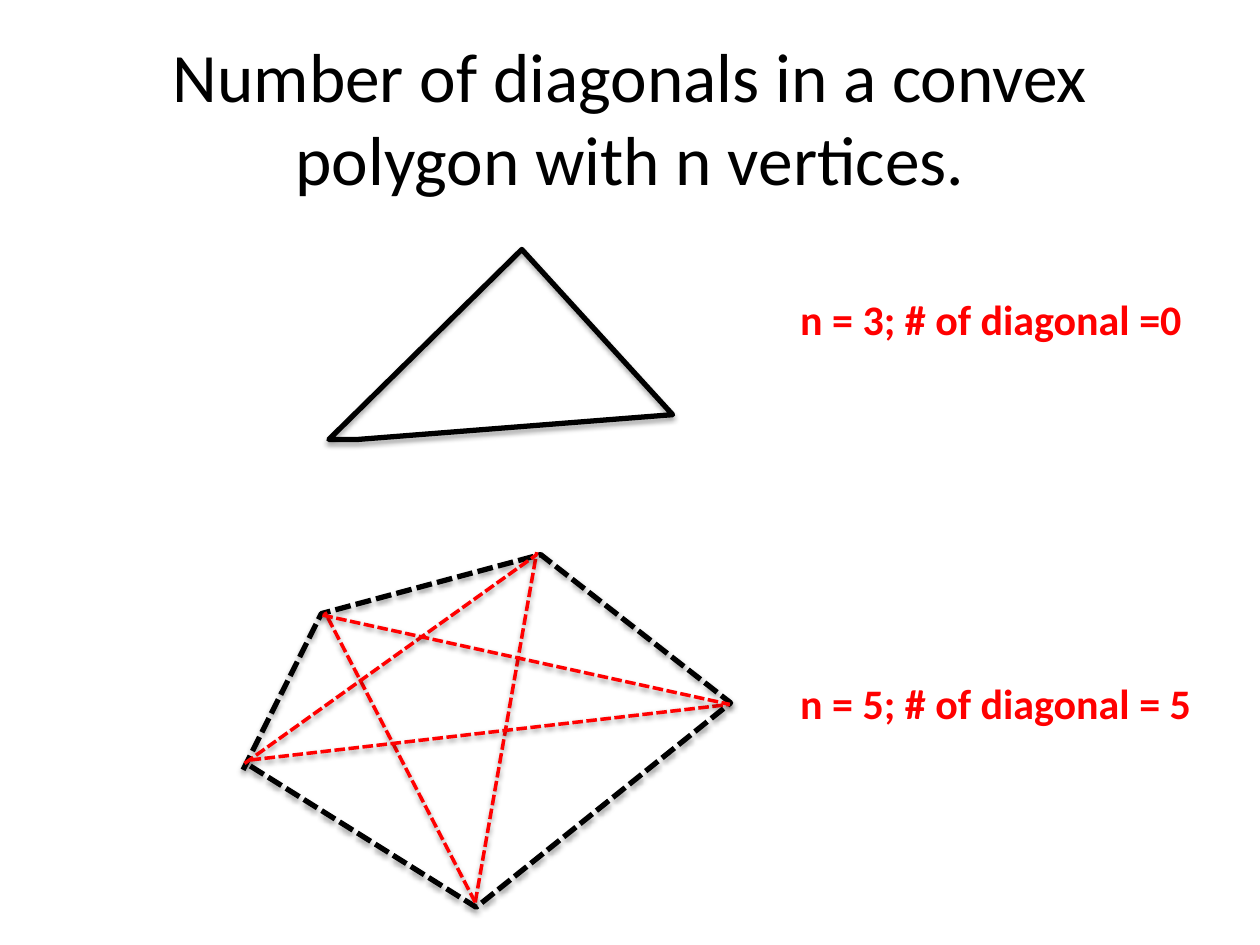
"""Build a slide that counts the diagonals of convex polygons."""
from lxml import etree
from pptx import Presentation
from pptx.dml.color import RGBColor
from pptx.enum.dml import MSO_LINE
from pptx.enum.shapes import MSO_CONNECTOR
from pptx.enum.text import MSO_ANCHOR, MSO_AUTO_SIZE, PP_ALIGN
from pptx.oxml.ns import qn
from pptx.util import Cm, Pt

STRAIGHT = MSO_CONNECTOR.STRAIGHT
DASH = MSO_LINE.SQUARE_DOT
LEFT, CENTER = PP_ALIGN.LEFT, PP_ALIGN.CENTER
MIDDLE, TOP = MSO_ANCHOR.MIDDLE, MSO_ANCHOR.TOP
FIT_SHAPE, NO_FIT = MSO_AUTO_SIZE.SHAPE_TO_FIT_TEXT, MSO_AUTO_SIZE.NONE
COLORS = {"ink": "000000", "accent": "FF0000"}


def write(holder, text, size=24, color="accent", bold=True, align=LEFT, anchor=TOP, fit=FIT_SHAPE):
    frame = holder.text_frame
    frame.word_wrap = True
    frame.auto_size = fit
    frame.vertical_anchor = anchor
    paragraph = frame.paragraphs[0]
    paragraph.alignment = align
    run = paragraph.add_run()
    run.text = text
    run.font.name = "Calibri"
    run.font.size = Pt(size)
    run.font.bold = bold
    run.font.color.rgb = RGBColor.from_string(COLORS[color])


def draw_stroke(stroke, color, width, dash=None, opacity=38, distance=1.6):
    stroke.line.color.rgb = RGBColor.from_string(COLORS[color])
    stroke.line.width = Pt(width)
    if dash:
        stroke.line.dash_style = dash
    effects = etree.SubElement(stroke._element.spPr, qn("a:effectLst"))
    shadow = etree.SubElement(effects, qn("a:outerShdw"), blurRad=str(Pt(3.1)),
                              dist=str(Pt(distance)), dir="5400000", rotWithShape="0")
    shade = etree.SubElement(shadow, qn("a:srgbClr"), val=COLORS["ink"])
    etree.SubElement(shade, qn("a:alpha"), val=str(opacity * 1000))


deck = Presentation()
deck.slide_width, deck.slide_height = Cm(25.4), Cm(19.05)
slide = deck.slides.add_slide(deck.slide_layouts[5])
shapes = slide.shapes

title = shapes.title
title.left, title.top, title.width, title.height = Cm(1.27), Cm(0.76), Cm(22.86), Cm(3.18)
write(title, "Number of diagonals in a convex polygon with n vertices.",
      size=39.6, color="ink", bold=False, align=CENTER, anchor=MIDDLE, fit=NO_FIT)

triangle = [(6.63, 8.86), (7.21, 8.86), (13.56, 8.36), (10.52, 5.03)]
pentagon = [(4.9, 15.52), (6.48, 12.37), (10.9, 11.18), (14.73, 14.17), (9.6, 18.29), (4.93, 15.37)]
outlines = [
    (triangle, True, {"opacity": 35, "distance": 1.8}),
    (pentagon, False, {"dash": DASH}),
]
for vertices, closed, style in outlines:
    corners = [(Cm(x), Cm(y)) for x, y in vertices]
    builder = shapes.build_freeform(*corners[0])
    builder.add_line_segments(corners[1:], close=closed)
    polygon = builder.convert_to_shape()
    polygon.fill.background()
    draw_stroke(polygon, "ink", 3, **style)

diagonals = [
    (9.58, 18.19, 10.82, 11.13),
    (9.58, 18.19, 6.55, 12.34),
    (4.93, 15.39, 10.82, 11.18),
    (5.05, 15.32, 14.71, 14.2),
    (6.5, 12.4, 14.71, 14.2),
]
for ends in diagonals:
    diagonal = shapes.add_connector(STRAIGHT, *map(Cm, ends))
    draw_stroke(diagonal, "accent", 2, dash=DASH)

for count, top in [("n = 3; # of diagonal =0", 5.79), ("n = 5; # of diagonal = 5", 13.54)]:
    write(shapes.add_textbox(Cm(15.88), Cm(top), Cm(8.84), Cm(1.27)), count)

deck.save("out.pptx")
